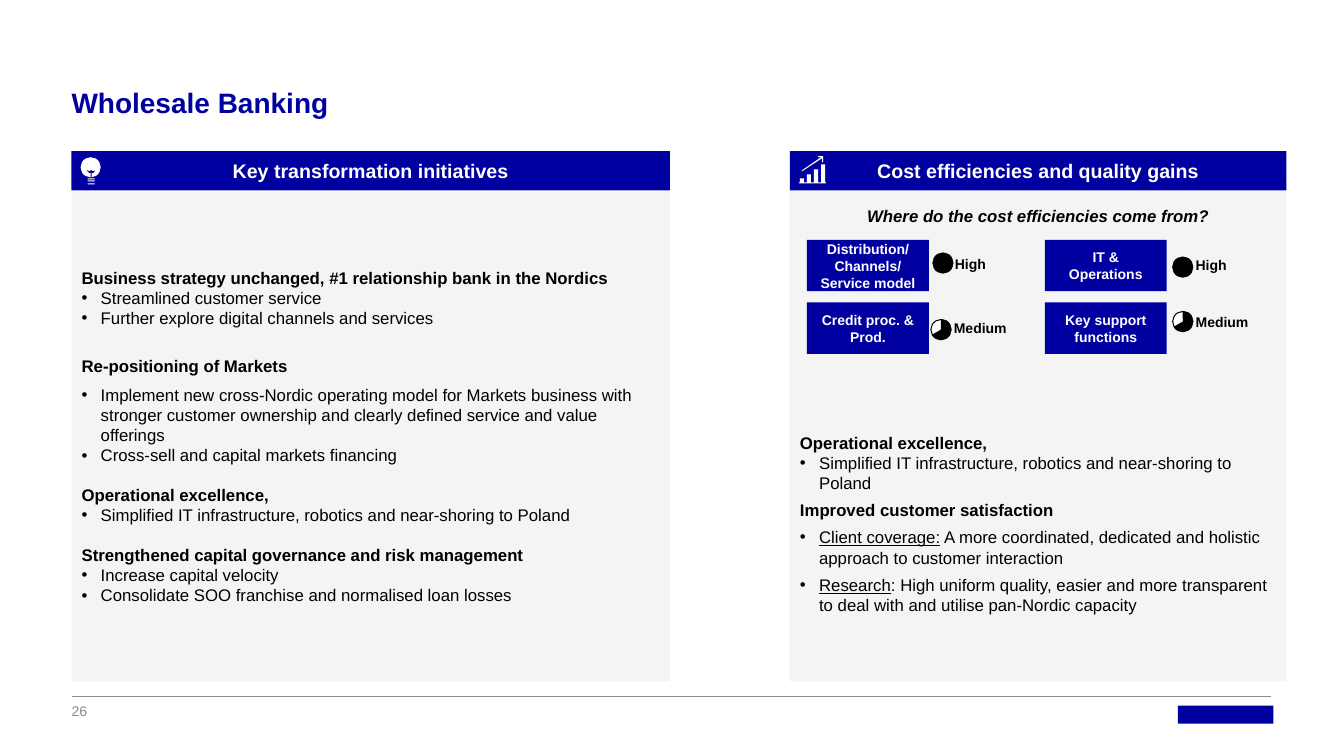
from lxml.etree import SubElement
from pptx import Presentation
from pptx.dml.color import RGBColor
from pptx.enum.shapes import MSO_CONNECTOR as Connector, MSO_SHAPE as Shape
from pptx.enum.text import MSO_ANCHOR as Anchor, MSO_AUTO_SIZE as AutoSize, PP_ALIGN as Align
from pptx.oxml.ns import qn
from pptx.util import Inches, Pt

BLUE, PANEL, GREY, BLACK, WHITE = "0000A0", "F4F4F4", "8B8A8D", "000000", "FFFFFF"
LEFT, RIGHT = 0.71, 7.84
LEFT_WIDTH, RIGHT_WIDTH = 5.94, 4.93
PANEL_TOP, PANEL_HEIGHT = 1.9, 4.86
BLANK_LINE = 14

INITIATIVES = [
    ("heading", 0, "Business strategy unchanged, #1 relationship bank in the Nordics"),
    ("bullet", 0, "Streamlined customer service"),
    ("bullet", 0, "Further explore digital channels and services"),
    ("heading", BLANK_LINE + 6, "Re-positioning of Markets"),
    ("bullet", 6, "Implement new cross-Nordic operating model for Markets business with "
                  "stronger customer ownership and clearly defined service and value offerings"),
    ("bullet", 0, "Cross-sell and capital markets financing"),
    ("heading", BLANK_LINE, "Operational excellence,"),
    ("bullet", 0, "Simplified IT infrastructure, robotics and near-shoring to Poland"),
    ("heading", BLANK_LINE, "Strengthened capital governance and risk management"),
    ("bullet", 0, "Increase capital velocity"),
    ("bullet", 0, "Consolidate SOO franchise and normalised loan losses"),
]
GAINS = [
    ("heading", 0, "Operational excellence,"),
    ("bullet", 0, "Simplified IT infrastructure, robotics and near-shoring to Poland"),
    ("heading", 5, "Improved customer satisfaction"),
    ("bullet", 5, "Client coverage:",
     " A more coordinated, dedicated and holistic approach to customer interaction"),
    ("bullet", 5, "Research",
     ": High uniform quality, easier and more transparent to deal with and utilise "
     "pan-Nordic capacity"),
]
SOURCES = [
    ("Distribution/\vChannels/\vService model", 8.01, 2.38, "High", 9.38, 2.49, 9.26, 2.51),
    ("Credit proc. & Prod.", 8.01, 3, "Medium", 9.37, 3.12, 9.24, 3.17),
    ("IT & Operations", 10.37, 2.38, "High", 11.77, 2.5, 11.64, 2.55),
    ("Key support functions", 10.37, 3, "Medium", 11.77, 3.06, 11.64, 3.09),
]
FILAMENT = [(86, 169), (87, 169), (89, 170), (90, 169), (91, 169), (92, 170), (94, 169),
            (94, 170), (92, 172), (91, 171), (91, 176), (90, 176), (90, 171), (89, 172)]
ARROW = [(796, 169), (815, 156), (812, 156), (812, 155), (817, 155), (817, 161),
         (816, 161), (816, 157), (796, 170)]


def color(value):
    """Turn a hex string into a colour."""
    return RGBColor.from_string(value)


class SlideBuilder:
    """Draws styled elements on one slide."""

    def __init__(self, slide, font="Arial"):
        """Keep the slide and the font name."""
        self.slide = slide
        self.font = font

    def place(self, shape, left, top, width, height):
        """Move and size a shape."""
        shape.left, shape.top = Inches(left), Inches(top)
        shape.width, shape.height = Inches(width), Inches(height)

    def style(self, paragraph, size, ink, bold=False, italic=False, align=Align.LEFT):
        """Format a whole paragraph."""
        paragraph.alignment = align
        font = paragraph.font
        font.name, font.size = self.font, Pt(size)
        font.bold, font.italic = bold, italic
        font.color.rgb = color(ink)

    def frame(self, shape, anchor, margin=None):
        """Prepare the text frame of a shape."""
        frame = shape.text_frame
        frame.word_wrap, frame.auto_size = True, AutoSize.NONE
        frame.vertical_anchor = anchor
        if margin is not None:
            frame.margin_left = frame.margin_right = Inches(margin)
            frame.margin_top = frame.margin_bottom = Inches(margin)
        return frame

    def paint(self, shape, fill, line=None):
        """Set fill and outline without a shadow."""
        shape.shadow.inherit = False
        shape.fill.solid()
        shape.fill.fore_color.rgb = color(fill)
        if line:
            shape.line.color.rgb = color(line)
            shape.line.width = Pt(0.75)
        else:
            shape.line.fill.background()
        return shape

    def box(self, kind, left, top, width, height, fill, line=None):
        """Add a preset shape."""
        shape = self.slide.shapes.add_shape(
            kind, Inches(left), Inches(top), Inches(width), Inches(height))
        return self.paint(shape, fill, line)

    def label_box(self, text, left, top, width, height, size):
        """Add a blue rectangle with centred white text."""
        shape = self.box(Shape.RECTANGLE, left, top, width, height, BLUE)
        paragraph = self.frame(shape, Anchor.MIDDLE).paragraphs[0]
        paragraph.text = text
        self.style(paragraph, size, WHITE, bold=True, align=Align.CENTER)

    def text(self, text, left, top, width, height, size, ink=BLACK, anchor=Anchor.TOP,
             margin=None, **look):
        """Add a one-paragraph text box."""
        shape = self.slide.shapes.add_textbox(
            Inches(left), Inches(top), Inches(width), Inches(height))
        paragraph = self.frame(shape, anchor, margin).paragraphs[0]
        paragraph.text = text
        self.style(paragraph, size, ink, **look)

    def title(self, text, left, top, width, height):
        """Fill the title placeholder."""
        shape = self.slide.shapes.title
        self.place(shape, left, top, width, height)
        paragraph = self.frame(shape, Anchor.BOTTOM, 0).paragraphs[0]
        paragraph.text = text
        self.style(paragraph, 20, BLUE, bold=True)

    def list(self, shape, items, left, top, width, height, anchor):
        """Fill a body placeholder with headings and bullets."""
        self.place(shape, left, top, width, height)
        frame = self.frame(shape, anchor)
        for index, (kind, space, *texts) in enumerate(items):
            paragraph = frame.add_paragraph() if index else frame.paragraphs[0]
            for text in texts:
                paragraph.add_run().text = text
            if len(texts) > 1:
                paragraph.runs[0].font.underline = True
            paragraph.space_before = Pt(space)
            bullet = kind == "bullet"
            indent = Inches(0.19) if bullet else 0
            properties = paragraph._p.get_or_add_pPr()
            properties.set("marL", str(indent))
            properties.set("indent", str(-indent))
            if bullet:
                SubElement(properties, qn("a:buChar")).set("char", "•")
            else:
                SubElement(properties, qn("a:buNone"))
            self.style(paragraph, 12, BLACK, bold=not bullet)

    def outline(self, points, fill):
        """Add a closed outline given in hundredths of an inch."""
        builder = self.slide.shapes.build_freeform(*points[0], scale=Inches(0.01))
        builder.add_line_segments(points[1:], close=True)
        self.paint(builder.convert_to_shape(), fill)

    def rule(self, left, top, right):
        """Add a thin horizontal line."""
        line = self.slide.shapes.add_connector(
            Connector.STRAIGHT, Inches(left), Inches(top), Inches(right), Inches(top))
        line.line.color.rgb = color(GREY)
        line.line.width = Pt(0.75)
        SubElement(line._element.spPr, qn("a:effectLst"))

    def rating(self, level, left, top):
        """Add a full disc, or a partly filled one for a medium level."""
        high = level == "High"
        self.box(Shape.OVAL, left, top, 0.2, 0.2, BLACK if high else WHITE, BLACK)
        if not high:
            arc = self.box(Shape.ARC, left, top, 0.2, 0.2, BLACK, BLACK)
            arc.adjustments[0], arc.adjustments[1] = 162, 90

    def bulb_icon(self):
        """Draw the light bulb."""
        self.box(Shape.OVAL, 0.8, 1.56, 0.2, 0.2, WHITE)
        self.outline(FILAMENT, BLUE)
        for top in (1.77, 1.79, 1.82):
            self.box(Shape.RECTANGLE, 0.87, top, 0.07, 0.01, WHITE)

    def growth_icon(self):
        """Draw the rising bars with an arrow."""
        bars = [(793, 181)]
        for index, top in enumerate((177, 173, 168, 163)):
            left = 794 + 7 * index
            bars += [(left, 181), (left, top), (left + 4, top), (left + 4, 181)]
        self.outline(bars + [(820, 181), (820, 182), (793, 182)], WHITE)
        self.outline(ARROW, WHITE)


def main():
    """Build and save the slide."""
    presentation = Presentation()
    presentation.slide_width, presentation.slide_height = Inches(13.34), Inches(7.5)
    slide = presentation.slides.add_slide(presentation.slide_layouts[3])
    builder = SlideBuilder(slide)
    initiatives, gains = slide.placeholders[1], slide.placeholders[2]

    builder.title("Wholesale Banking", LEFT, 0.39, 7.87, 0.79)
    builder.list(initiatives, INITIATIVES, LEFT, PANEL_TOP, LEFT_WIDTH, PANEL_HEIGHT,
                 Anchor.MIDDLE)
    initiatives.fill.solid()
    initiatives.fill.fore_color.rgb = color(PANEL)
    builder.list(gains, GAINS, RIGHT, 4.24, RIGHT_WIDTH, 1.93, Anchor.TOP)
    panel = builder.box(Shape.RECTANGLE, RIGHT, PANEL_TOP, RIGHT_WIDTH, PANEL_HEIGHT, PANEL)
    gains._element.addprevious(panel._element)

    builder.label_box("Key transformation initiatives", LEFT, 1.5, LEFT_WIDTH, 0.39, 14)
    builder.label_box("Cost efficiencies and quality gains", RIGHT, 1.5, RIGHT_WIDTH, 0.39, 14)
    builder.bulb_icon()
    builder.growth_icon()
    builder.text("Where do the cost efficiencies come from?", RIGHT, 1.99, RIGHT_WIDTH, 0.3, 12,
                 bold=True, italic=True, align=Align.CENTER)
    for name, left, top, level, level_left, level_top, disc_left, disc_top in SOURCES:
        builder.label_box(name, left, top, 1.21, 0.51, 10)
        builder.text(level, level_left, level_top, 1.27, 0.27, 10, bold=True)
        builder.rating(level, disc_left, disc_top)

    builder.rule(LEFT, 6.91, 12.62)
    builder.text("26", LEFT, 6.97, 0.35, 0.16, 10, GREY, Anchor.MIDDLE, 0)
    builder.box(Shape.RECTANGLE, 11.69, 7, 0.95, 0.18, BLUE)
    presentation.save("out.pptx")


if __name__ == "__main__":
    main()
